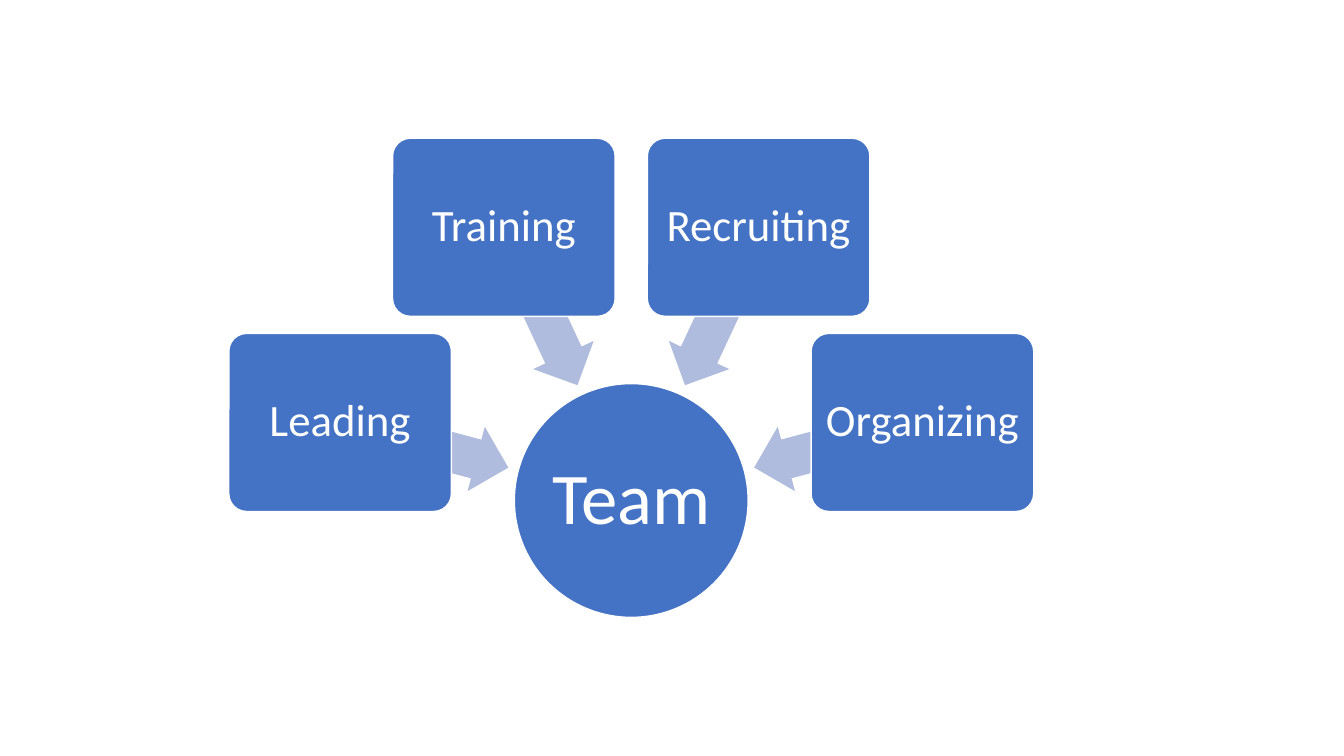
from math import cos, radians, sin

from pptx import Presentation
from pptx.dml.color import RGBColor
from pptx.enum import shapes, text
from pptx.util import Pt

TEAM_X, TEAM_Y = 450.9, 357.5
BOX_RADIUS, ARROW_RADIUS = 215.3, 153.2
BLUE, PALE_BLUE, WHITE = "4472C4", "B0BCDE", "FFFFFF"

deck = Presentation()
deck.slide_width, deck.slide_height = Pt(960), Pt(540)
slide = deck.slides.add_slide(deck.slide_layouts[6])


def add_around_team(kind, radius, angle, width, height, color):
    """Add a shape centred at a distance and clockwise angle from the team's centre."""
    x = TEAM_X + radius * cos(radians(angle))
    y = TEAM_Y + radius * sin(radians(angle))
    shape = slide.shapes.add_shape(
        kind, Pt(x - width / 2), Pt(y - height / 2), Pt(width), Pt(height))
    shape.shadow.inherit = False
    shape.fill.solid()
    shape.fill.fore_color.rgb = RGBColor.from_string(color)
    shape.line.fill.background()
    return shape


def outline_and_label(shape, label, size, inset, wrap):
    shape.line.color.rgb = RGBColor.from_string(WHITE)
    shape.line.width = Pt(1)
    frame = shape.text_frame
    frame.word_wrap = wrap
    frame.vertical_anchor = text.MSO_ANCHOR.MIDDLE
    for side in ("left", "top", "right", "bottom"):
        setattr(frame, f"margin_{side}", Pt(inset))
    paragraph = frame.paragraphs[0]
    paragraph.alignment = text.PP_ALIGN.CENTER
    paragraph.line_spacing = 0.9
    run = paragraph.add_run()
    run.text = label
    for name, value in {"name": "Calibri", "size": Pt(size)}.items():
        setattr(run.font, name, value)
    run.font.color.rgb = RGBColor.from_string(WHITE)


team = add_around_team(shapes.MSO_SHAPE.OVAL, 0, 0, 167, 167, BLUE)
outline_and_label(team, "Team", 52, 2.6, wrap=False)

for index, task in enumerate(["Leading", "Training", "Recruiting", "Organizing"]):
    angle = 195 + 50 * index
    arrow = add_around_team(
        shapes.MSO_SHAPE.LEFT_ARROW, ARROW_RADIUS, angle, 124.6, 47.6, PALE_BLUE)
    arrow.rotation = angle
    arrow.adjustments[0] = 0.6
    arrow.adjustments[1] = 0.5

    box = add_around_team(
        shapes.MSO_SHAPE.ROUNDED_RECTANGLE, BOX_RADIUS, angle, 159, 127.2, BLUE)
    box.adjustments[0] = 0.1
    outline_and_label(box, task, 32, 4.8, wrap=True)

deck.save("out.pptx")
